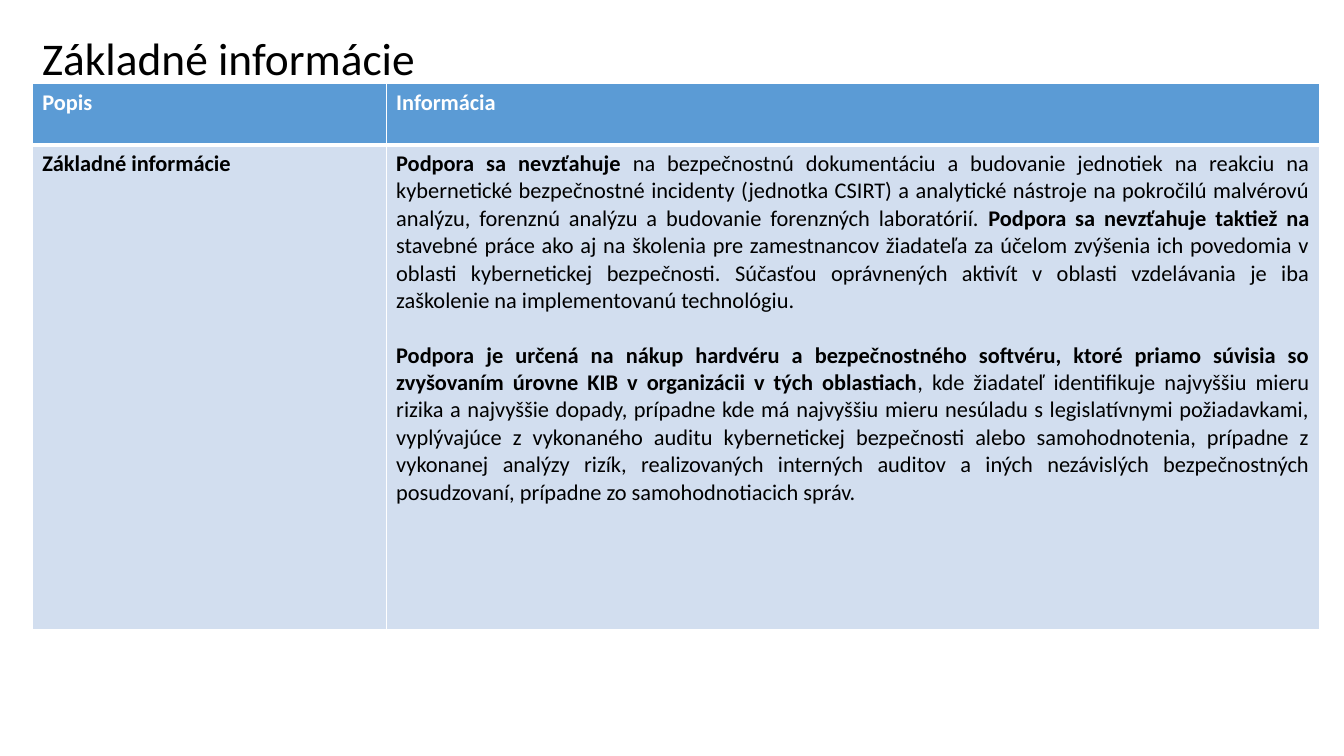
from dataclasses import dataclass

import pptx
import pptx.dml.color
import pptx.enum.text
import pptx.oxml
import pptx.oxml.ns
import pptx.util
from pptx.util import Inches

ALIGN = pptx.enum.text.PP_ALIGN
ANCHOR = pptx.enum.text.MSO_ANCHOR


@dataclass(frozen=True)
class Theme:
    font: str = "Calibri"
    text: str = "000000"
    white: str = "FFFFFF"
    header_fill: str = "5B9BD5"
    body_fill: str = "D2DEEF"
    title_size: float = 32.4
    title_end_size: float = 39.6
    table_size: float = 16
    paragraph_gap: float = 19.5


THEME = Theme()

HEADERS = ["Popis", "Informácia"]
TOPIC = "Základné informácie"
# Each paragraph is a list of (text, bold) spans.
SUPPORT_RULES = [
    [
        ("Podpora sa nevzťahuje ", True),
        ("na bezpečnostnú dokumentáciu a budovanie jednotiek na reakciu na "
         "kybernetické bezpečnostné incidenty (jednotka CSIRT) a analytické "
         "nástroje na pokročilú malvérovú analýzu, forenznú analýzu a "
         "budovanie forenzných laboratórií. ", False),
        ("Podpora sa nevzťahuje taktiež na ", True),
        ("stavebné práce ako aj na školenia pre zamestnancov žiadateľa za "
         "účelom zvýšenia ich povedomia v oblasti kybernetickej bezpečnosti. "
         "Súčasťou oprávnených aktivít v oblasti vzdelávania je iba "
         "zaškolenie na implementovanú technológiu. ", False),
    ],
    [
        ("Podpora je určená na nákup hardvéru a bezpečnostného softvéru, "
         "ktoré priamo súvisia so zvyšovaním úrovne KIB v organizácii v tých "
         "oblastiach", True),
        (", kde žiadateľ identifikuje najvyššiu mieru rizika a najvyššie "
         "dopady, prípadne kde má najvyššiu mieru nesúladu s legislatívnymi "
         "požiadavkami, vyplývajúce z vykonaného auditu kybernetickej "
         "bezpečnosti alebo samohodnotenia, prípadne z vykonanej analýzy "
         "rizík, realizovaných interných auditov a iných nezávislých "
         "bezpečnostných posudzovaní, prípadne zo samohodnotiacich správ. ",
         False),
    ],
]


def rgb(color):
    return pptx.dml.color.RGBColor.from_string(color)


def add_span(para, text, *, size=THEME.table_size, color=THEME.text, bold=False):
    span = para.add_run()
    span.text = text
    span.font.name = THEME.font
    span.font.size = pptx.util.Pt(size)
    span.font.bold = bold
    span.font.color.rgb = rgb(color)


def add_title(slide):
    box = slide.shapes.add_textbox(Inches(0.32), Inches(0.32), Inches(10), Inches(0.51))
    frame = box.text_frame
    frame.word_wrap = True
    frame.vertical_anchor = ANCHOR.MIDDLE
    para = frame.paragraphs[0]
    para.line_spacing = 0.9
    add_span(para, TOPIC, size=THEME.title_size)
    # A larger no-break space sets the height of the title line.
    add_span(para, " ", size=THEME.title_end_size)


def style_cell(cell, fill, bottom_width):
    """Draw white borders, then fill the cell."""
    properties = cell._tc.get_or_add_tcPr()
    for side, width in (("L", 1), ("R", 1), ("T", 1), ("B", bottom_width)):
        properties.append(pptx.oxml.parse_xml(
            f'<a:ln{side} {pptx.oxml.ns.nsdecls("a")} w="{pptx.util.Pt(width)}">'
            f'<a:solidFill><a:srgbClr val="{THEME.white}"/></a:solidFill>'
            f'</a:ln{side}>'))
    cell.fill.solid()
    cell.fill.fore_color.rgb = rgb(fill)


def fill_rules(frame):
    for index, spans in enumerate(SUPPORT_RULES):
        para = frame.add_paragraph() if index else frame.paragraphs[0]
        para.alignment = ALIGN.JUSTIFY
        if index:
            para.space_before = pptx.util.Pt(THEME.paragraph_gap)
        for text, bold in spans:
            add_span(para, text, bold=bold)


def add_information_table(slide):
    table = slide.shapes.add_table(
        2, 2, Inches(0.32), Inches(0.83), Inches(12.77), Inches(5.42)).table
    for column, width in zip(table.columns, (3.51, 9.26)):
        column.width = Inches(width)
    for row, height in zip(table.rows, (0.61, 4.81)):
        row.height = Inches(height)

    for index, header in enumerate(HEADERS):
        head, body = table.cell(0, index), table.cell(1, index)
        style_cell(head, THEME.header_fill, bottom_width=3)
        style_cell(body, THEME.body_fill, bottom_width=1)
        add_span(head.text_frame.paragraphs[0], header, color=THEME.white, bold=True)

    add_span(table.cell(1, 0).text_frame.paragraphs[0], TOPIC, bold=True)
    fill_rules(table.cell(1, 1).text_frame)


def main():
    deck = pptx.Presentation()
    deck.slide_width = Inches(13.33)
    deck.slide_height = Inches(7.5)
    slide = deck.slides.add_slide(deck.slide_layouts[6])
    add_title(slide)
    add_information_table(slide)
    deck.save("out.pptx")


if __name__ == "__main__":
    main()
